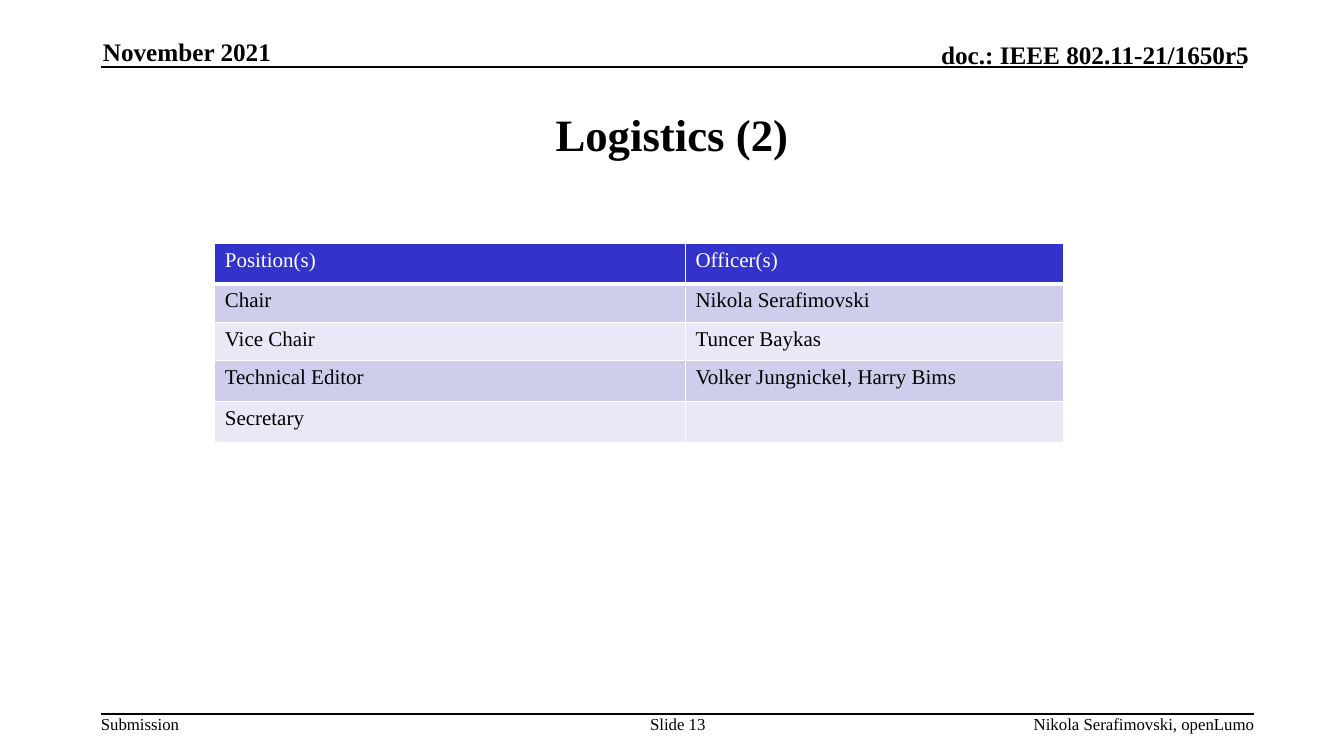
from lxml.etree import SubElement
from pptx import Presentation
from pptx.dml.color import RGBColor
from pptx.enum.shapes import MSO_CONNECTOR
from pptx.enum.text import MSO_ANCHOR as ANCHOR, PP_ALIGN as ALIGN
from pptx.oxml.ns import qn
from pptx.util import Pt

BLACK = RGBColor(0x00, 0x00, 0x00)
WHITE = RGBColor(0xFF, 0xFF, 0xFF)
HEADER_BLUE = RGBColor(0x33, 0x33, 0xCC)
BAND_DARK = RGBColor(0xCE, 0xCE, 0xEC)
BAND_LIGHT = RGBColor(0xE8, 0xE8, 0xF6)
FONT = "Times New Roman"

OFFICERS = [
    ("Position(s)", "Officer(s)"),
    ("Chair", "Nikola Serafimovski"),
    ("Vice Chair", "Tuncer Baykas"),
    ("Technical Editor", "Volker Jungnickel, Harry Bims"),
    ("Secretary", ""),
]
COL_WIDTHS = (336.2, 270)
ROW_HEIGHTS = (29.2, 27.4, 27.4, 29.2, 29.2)


def write(tf, text, size=12, bold=False, color=BLACK, align=ALIGN.LEFT,
          anchor=ANCHOR.TOP, margins=(0, 0), wrap=True):
    """Fill a text frame with one formatted paragraph."""
    tf.word_wrap = wrap
    tf.vertical_anchor = anchor
    tf.margin_left = tf.margin_right = Pt(margins[0])
    tf.margin_top = tf.margin_bottom = Pt(margins[1])
    p = tf.paragraphs[0]
    p.alignment = align
    r = p.add_run()
    r.text = text
    r.font.name, r.font.size, r.font.bold = FONT, Pt(size), bold
    r.font.color.rgb = color


def add_label(slide, box, text, **fmt):
    sp = slide.shapes.add_textbox(*map(Pt, box))
    write(sp.text_frame, text, **fmt)


def add_rule(slide, left, top, width):
    line = slide.shapes.add_connector(
        MSO_CONNECTOR.STRAIGHT, Pt(left), Pt(top), Pt(left + width), Pt(top))
    line.line.color.rgb = BLACK
    line.line.width = Pt(1)
    SubElement(line._element.spPr, qn("a:effectLst"))


def add_header(slide, left, top, width, height):
    # Date, document number and the rule below them
    add_rule(slide, left, top + height, width)
    fmt = dict(size=18, bold=True, anchor=ANCHOR.BOTTOM)
    add_label(slide, (left + 1.5, top, 196.5, 21.6), "November 2021", **fmt)
    add_label(slide, (left + width - 363, top + 2.2, 367.2, 21.6),
              "doc.: IEEE 802.11-21/1650r5", align=ALIGN.RIGHT, **fmt)


def add_title(slide, left, top, width, height):
    sp = slide.shapes.title
    sp.left, sp.top, sp.width, sp.height = map(Pt, (left, top, width, height))
    write(sp.text_frame, "Logistics (2)", size=32, bold=True,
          align=ALIGN.CENTER, anchor=ANCHOR.MIDDLE, margins=(7.2, 3.6))


def add_borders(cell, bottom):
    tc_pr = cell._tc.get_or_add_tcPr()
    for side, width in (("L", 1), ("R", 1), ("T", 1), ("B", bottom)):
        ln = SubElement(tc_pr, qn(f"a:ln{side}"), w=str(Pt(width)))
        fill = SubElement(ln, qn("a:solidFill"))
        SubElement(fill, qn("a:srgbClr"), val=str(WHITE))


def add_officers(slide, left, top, width, height):
    frame = slide.shapes.add_table(len(OFFICERS), len(COL_WIDTHS),
                                   Pt(left), Pt(top), Pt(width), Pt(height))
    table = frame.table
    for col, col_width in zip(table.columns, COL_WIDTHS):
        col.width = Pt(col_width)
    for i, (row, texts) in enumerate(zip(table.rows, OFFICERS)):
        row.height = Pt(ROW_HEIGHTS[i])
        band = HEADER_BLUE if i == 0 else BAND_DARK if i % 2 else BAND_LIGHT
        for cell, text in zip(row.cells, texts):
            add_borders(cell, bottom=1 if i else 3)
            cell.fill.solid()
            cell.fill.fore_color.rgb = band
            if text:
                write_cell(cell, text, BLACK if i else WHITE)


def write_cell(cell, text, color):
    write(cell.text_frame, text, size=15, color=color, margins=(7.2, 3.6))


def add_footer(slide, left, top, width, height):
    # Rule with the kind of document, slide number and author below it
    add_rule(slide, left, top, width)
    add_label(slide, (left, top, 56.9, height), "Submission", wrap=False)
    add_label(slide, (left + 384.5, top, 55.4, height), "Slide 13",
              align=ALIGN.CENTER)
    add_label(slide, (left + width - 334, top, 334, height),
              "Nikola Serafimovski, openLumo", align=ALIGN.RIGHT)


def main():
    prs = Presentation()
    prs.slide_width, prs.slide_height = Pt(960), Pt(540)
    slide = prs.slides.add_slide(prs.slide_layouts[5])
    add_header(slide, 72, 26, 816, 22)
    add_title(slide, 72, 54, 816, 83.5)
    add_officers(slide, 153.4, 173.8, sum(COL_WIDTHS), sum(ROW_HEIGHTS))
    add_footer(slide, 72, 510, 824, 14.4)
    prs.save("out.pptx")


if __name__ == "__main__":
    main()
